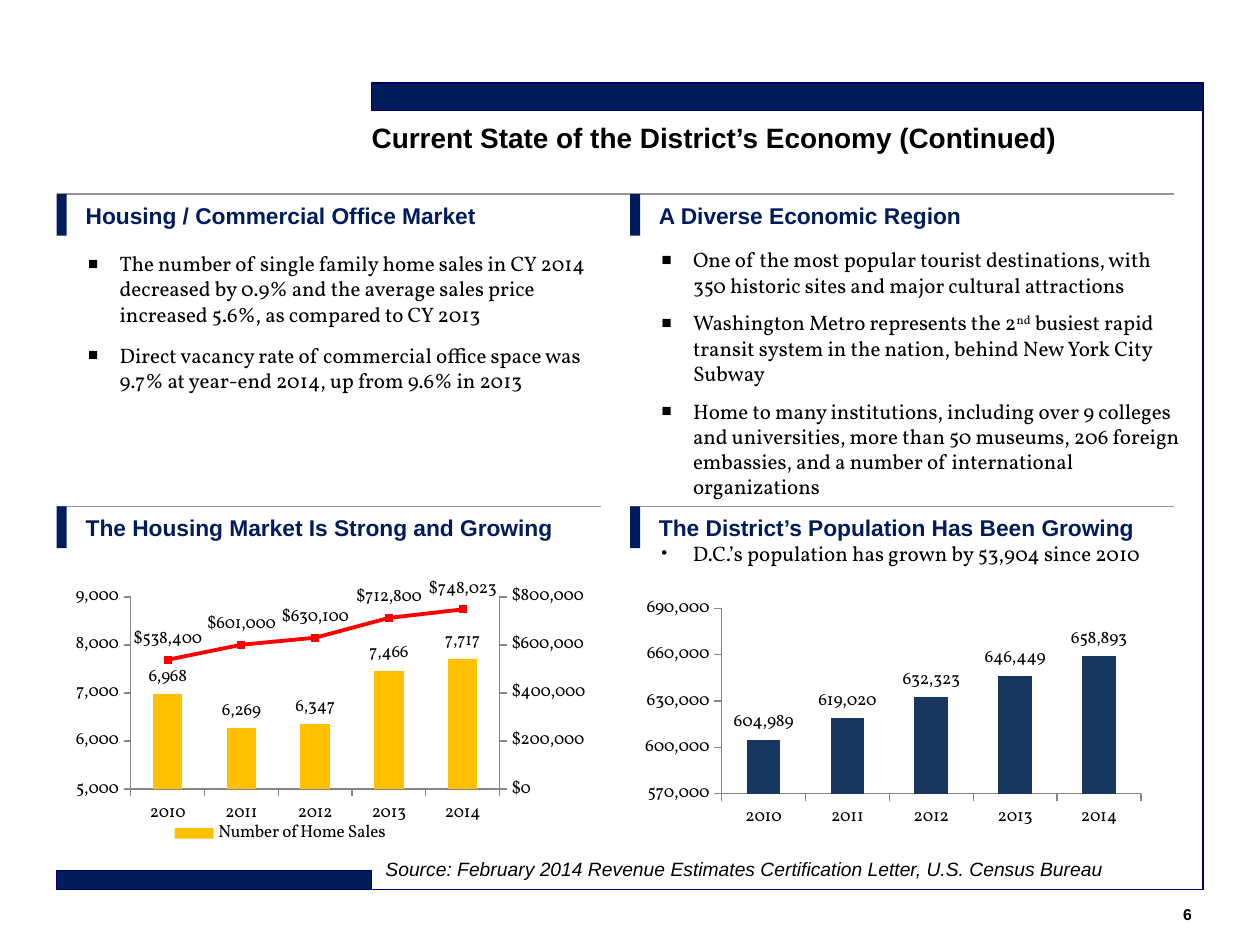
from typing import NamedTuple

from pptx import Presentation
from pptx.chart.data import CategoryChartData
from pptx.dml.color import RGBColor
from pptx.enum.chart import XL_CHART_TYPE as ChartType, XL_LABEL_POSITION as LabelPos
from pptx.enum.chart import XL_LEGEND_POSITION as LegendPos, XL_MARKER_STYLE as Marker, XL_TICK_MARK as Tick
from pptx.enum.shapes import MSO_CONNECTOR as Connector, MSO_SHAPE as Shape
from pptx.enum.text import MSO_ANCHOR as Anchor, MSO_AUTO_SIZE as AutoSize, PP_ALIGN as Align
from pptx.oxml import parse_xml
from pptx.oxml.ns import nsdecls, qn
from pptx.util import Inches, Pt

NAVY, FRAME, GREY, BLACK, RED, AXIS_GREY = "001C5C", "000066", "969696", "000000", "FF0000", "868686"
HEAD_FONT, BODY_FONT = "Arial", "Vollkorn"
COLUMNS, ROWS, SECTION_WIDTH = (0.45, 5.0), (1.54, 4.02), 4.32
LEFT, SPLIT, RIGHT, TOP, BOTTOM = 0.45, 2.95, 9.55, 0.66, 7.06
YEARS = ["2010", "2011", "2012", "2013", "2014"]

class Section(NamedTuple):
    column: int
    row: int
    heading: str
    bullets: list = []     # paragraphs as lists of runs; every second run is raised
    size: tuple = ()       # drop below the section rule, width, height
    mark: str = "■"
    before: float = 5.4

class ColumnChart(NamedTuple):
    place: tuple
    plot: tuple            # shares of the chart's size
    color: str
    scale: tuple           # minimum, maximum, step
    series: dict           # a second series is drawn as a line

SECTIONS = [
    Section(0, 0, "Housing / Commercial Office Market", [
        ["The number of single family home sales in CY 2014 decreased by 0.9% and the average sales "
         "price increased 5.6%, as compared to CY 2013"],
        ["Direct vacancy rate of commercial office space was 9.7% at year-end 2014, up from 9.6% in 2013"],
    ], (0.41, 4.32, 1.23)),
    Section(1, 0, "A Diverse Economic Region", [
        ["One of the most popular tourist destinations, with 350 historic sites and major cultural attractions"],
        ["Washington Metro represents the 2", "nd",
         " busiest rapid transit system in the nation, behind New York City Subway"],
        ["Home to many institutions, including over 9 colleges and universities, more than 50 museums, "
         "206 foreign embassies, and a number of international organizations"],
    ], (0.38, 4.42, 2.13), before=3.6),
    Section(0, 1, "The Housing Market Is Strong and Growing"),
    Section(1, 1, "The District’s Population Has Been Growing",
            [["D.C.’s population has grown by 53,904 since 2010"]], (0.23, 4.24, 0.29), mark="•"),
]
CHARTS = [
    ColumnChart((0.57, 4.58, 4.09, 2.2), (0.117, 0.072, 0.731, 0.693), "FFC000", (5000, 9000, 1000),
                {"Number of Home Sales ": [6968, 6269, 6347, 7466, 7717],
                 "Average Home Sale Prices": [538400, 601000, 630100, 712800, 748023]}),
    ColumnChart((5.12, 4.72, 4.09, 2.09), (0.145, 0.052, 0.817, 0.704), "17375E", (570000, 690000, 30000),
                {"Series 1": [604989, 619020, 632323, 646449, 658893]}),
]

def paint(fill, color: str) -> None:
    fill.solid()
    fill.fore_color.rgb = RGBColor.from_string(color)

def draw_line(line, color: str, width: float) -> None:
    paint(line.fill, color)
    line.width = Pt(width)

def style(font, size: float, name: str, color: str = BLACK, bold=False, italic=False) -> None:
    font.size, font.name, font.bold, font.italic = Pt(size), name, bold, italic
    font.color.rgb = RGBColor.from_string(color)

def add_bar(page, place: tuple, outlined: bool = False) -> None:
    bar = page.shapes.add_shape(Shape.RECTANGLE, *map(Inches, place))
    bar.shadow.inherit = False
    paint(bar.fill, NAVY)
    if outlined:
        draw_line(bar.line, FRAME, 0.75)
    else:
        bar.line.fill.background()

def add_rule(page, ends: tuple, color: str) -> None:
    rule = page.shapes.add_connector(Connector.STRAIGHT, *map(Inches, ends))
    draw_line(rule.line, color, 1)
    rule._element.spPr.append(parse_xml(f"<a:effectLst {nsdecls('a')}/>"))

def set_frame(box, insets: tuple, anchor=Anchor.TOP, grow=False, wrap=True):
    frame = box.text_frame
    frame.margin_left, frame.margin_top, frame.margin_right, frame.margin_bottom = map(Inches, insets)
    frame.vertical_anchor, frame.word_wrap = anchor, wrap
    frame.auto_size = AutoSize.SHAPE_TO_FIT_TEXT if grow else AutoSize.NONE
    return frame

def add_text(box, text: str, size: float, insets: tuple, color=BLACK, bold=False, italic=False,
             align=Align.LEFT, **options) -> None:
    para = set_frame(box, insets, **options).paragraphs[0]
    para.alignment = align
    span = para.add_run()
    span.text = text
    style(span.font, size, HEAD_FONT, color, bold, italic)

def add_box(page, place: tuple):
    return page.shapes.add_textbox(*map(Inches, place))

def add_bullets(page, section: Section, left: float, top: float) -> None:
    drop, width, height = section.size
    frame = set_frame(add_box(page, (left, top + drop, width, height)), (0, 0.04, 0, 0.04), grow=True)
    for index, runs in enumerate(section.bullets):
        para = frame.add_paragraph() if index else frame.paragraphs[0]
        props = para._p.get_or_add_pPr()
        props.set("marL", str(Inches(0.5)))
        props.set("indent", str(Inches(-0.25)))
        for tag in ('buSzPct val="80000"', 'buFont typeface="Arial"', f'buChar char="{section.mark}"'):
            props.append(parse_xml(f"<a:{tag} {nsdecls('a')}/>"))
        para.space_before, para.space_after = Pt(section.before if index else 0), Pt(3.6)
        for place, text in enumerate(runs):
            span = para.add_run()
            span.text = text
            style(span.font, 12, BODY_FONT)
            if place % 2:
                span.font._element.set("baseline", "30000")

def add_section(page, section: Section) -> None:
    left, top = COLUMNS[section.column], ROWS[section.row]
    add_text(add_box(page, (left + 0.23, top, SECTION_WIDTH - 0.23, 0.28)), section.heading, 13,
             (0, 0.06, 0, 0), NAVY, bold=True, grow=True)
    add_rule(page, (left, top, left + SECTION_WIDTH, top), GREY)
    add_bar(page, (left, top, 0.08, 0.33))
    if section.bullets:
        add_bullets(page, section, left, top)

def set_layout(parent, index: int, shares: tuple, target: str = "") -> None:
    for old in parent.findall(qn("c:layout")):
        parent.remove(old)
    sizes = "".join(f'<c:{key} val="{share}"/>' for key, share in zip("xywh", shares))
    parent.insert(index, parse_xml(f'<c:layout {nsdecls("c")}><c:manualLayout>{target}<c:xMode val="edge"/>'
                                   f'<c:yMode val="edge"/>{sizes}</c:manualLayout></c:layout>'))

def show_values(series, number_format: str, position) -> None:
    labels = series.data_labels
    labels.show_value, labels.position = True, position
    labels.number_format, labels.number_format_is_linked = number_format, False
    style(labels.font, 10, BODY_FONT)

def axis_xml(kind: str, own: int, other: int, hidden: int, side: str, limits="", step=""):
    return parse_xml(
        f'<c:{kind} {nsdecls("c", "a")}><c:axId val="{own}"/><c:scaling><c:orientation val="minMax"/>{limits}'
        f'</c:scaling><c:delete val="{hidden}"/><c:axPos val="{side}"/>'
        '<c:numFmt formatCode="&quot;$&quot;#,##0" sourceLinked="0"/><c:majorTickMark val="out"/>'
        '<c:minorTickMark val="none"/><c:tickLblPos val="nextTo"/><c:spPr><a:ln w="9525"><a:solidFill>'
        f'<a:srgbClr val="{AXIS_GREY}"/></a:solidFill></a:ln></c:spPr><c:crossAx val="{other}"/>'
        f'<c:crosses val="{"autoZero" if hidden else "max"}"/>{step}</c:{kind}>')

def move_to_right_axis(chart, area) -> None:
    columns = area.find(qn("c:barChart"))
    series = columns.findall(qn("c:ser"))[1]
    for flag in series.findall(qn("c:invertIfNegative")):
        series.remove(flag)
    line = parse_xml(f'<c:lineChart {nsdecls("c")}><c:grouping val="standard"/><c:varyColors val="0"/>'
                     '<c:marker val="1"/><c:axId val="5001"/><c:axId val="5002"/></c:lineChart>')
    line.insert(2, series)
    columns.addnext(line)
    area.find(qn("c:valAx")).addnext(axis_xml("valAx", 5002, 5001, 0, "r", '<c:max val="800000"/><c:min val="0"/>',
                                              '<c:majorUnit val="200000"/>'))
    area.find(qn("c:valAx")).addnext(axis_xml("catAx", 5001, 5002, 1, "b"))
    prices = chart.plots[1].series[0]
    prices.smooth = False
    draw_line(prices.format.line, RED, 2.25)
    prices.marker.style, prices.marker.size = Marker.SQUARE, 4
    paint(prices.marker.format.fill, RED)
    draw_line(prices.marker.format.line, RED, 0.75)
    show_values(prices, '"$"#,##0', LabelPos.ABOVE)

def add_column_chart(page, item: ColumnChart) -> None:
    data = CategoryChartData(number_format="#,##0")
    data.categories = YEARS
    for name, values in item.series.items():
        data.add_series(name, values)
    chart = page.shapes.add_chart(ChartType.COLUMN_CLUSTERED, *map(Inches, item.place), data).chart
    chart.has_title, chart.has_legend = False, len(item.series) > 1
    style(chart.font, 10, BODY_FONT)
    axis = chart.value_axis
    for each in (chart.category_axis, axis):
        each.has_major_gridlines, each.major_tick_mark, each.minor_tick_mark = False, Tick.OUTSIDE, Tick.NONE
        draw_line(each.format.line, AXIS_GREY, 0.75)
    axis.minimum_scale, axis.maximum_scale, axis.major_unit = item.scale
    axis.tick_labels.number_format, axis.tick_labels.number_format_is_linked = "#,##0", False
    plot = chart.plots[0]
    plot.gap_width, plot.vary_by_categories = 150, False
    paint(plot.series[0].format.fill, item.color)
    show_values(plot.series[0], "#,##0", LabelPos.OUTSIDE_END)
    area = chart._chartSpace.chart.plotArea
    set_layout(area, 0, item.plot, '<c:layoutTarget val="inner"/>')
    if chart.has_legend:
        move_to_right_axis(chart, area)
        chart.legend.position, chart.legend.include_in_layout = LegendPos.BOTTOM, False
        set_layout(chart.legend._element, 1, (0.01, 0.87, 0.85, 0.11))

def main() -> None:
    deck = Presentation()
    deck.slide_width, deck.slide_height = Inches(10), Inches(7.5)
    page = deck.slides.add_slide(deck.slide_layouts[5])
    # Frame
    add_bar(page, (SPLIT, TOP, RIGHT - SPLIT, 0.22), outlined=True)
    add_bar(page, (LEFT, BOTTOM - 0.15, SPLIT - LEFT, 0.15), outlined=True)
    for ends, color in (((RIGHT, TOP, RIGHT, BOTTOM), FRAME), ((RIGHT, BOTTOM, LEFT, BOTTOM), FRAME),
                        ((COLUMNS[0], ROWS[0], COLUMNS[1] + SECTION_WIDTH, ROWS[0]), GREY)):
        add_rule(page, ends, color)
    # Title, source and page number
    title = page.shapes.title
    title.left, title.top, title.width, title.height = map(Inches, (SPLIT, 0.92, 6.36, 0.29))
    add_text(title, "Current State of the District’s Economy (Continued)", 16, (0, 0.04, 0.09, 0.04), bold=True)
    add_text(add_box(page, (3.06, 6.8, 6.94, 0.19)),
             "Source: February 2014 Revenue Estimates Certification Letter, U.S. Census Bureau",
             11, (0, 0, 0, 0), italic=True, anchor=Anchor.BOTTOM, grow=True)
    add_text(add_box(page, (9.21, 7.14, 0.34, 0.24)), "6", 9, (0.09, 0.04, 0.09, 0.04), bold=True,
             align=Align.RIGHT, wrap=False)
    # Sections and charts
    for section in SECTIONS:
        add_section(page, section)
    for item in CHARTS:
        add_column_chart(page, item)
    deck.save("out.pptx")

if __name__ == "__main__":
    main()
